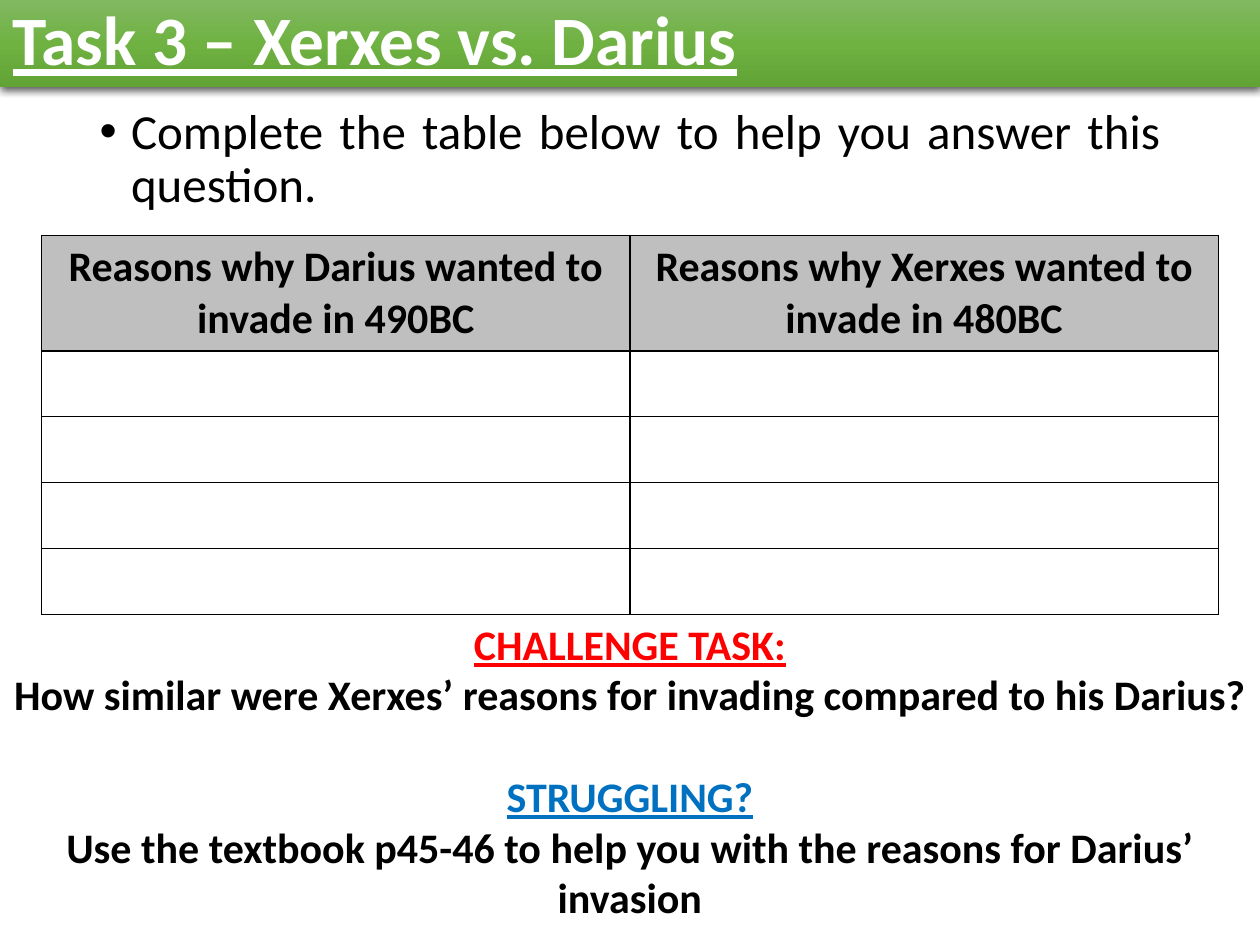
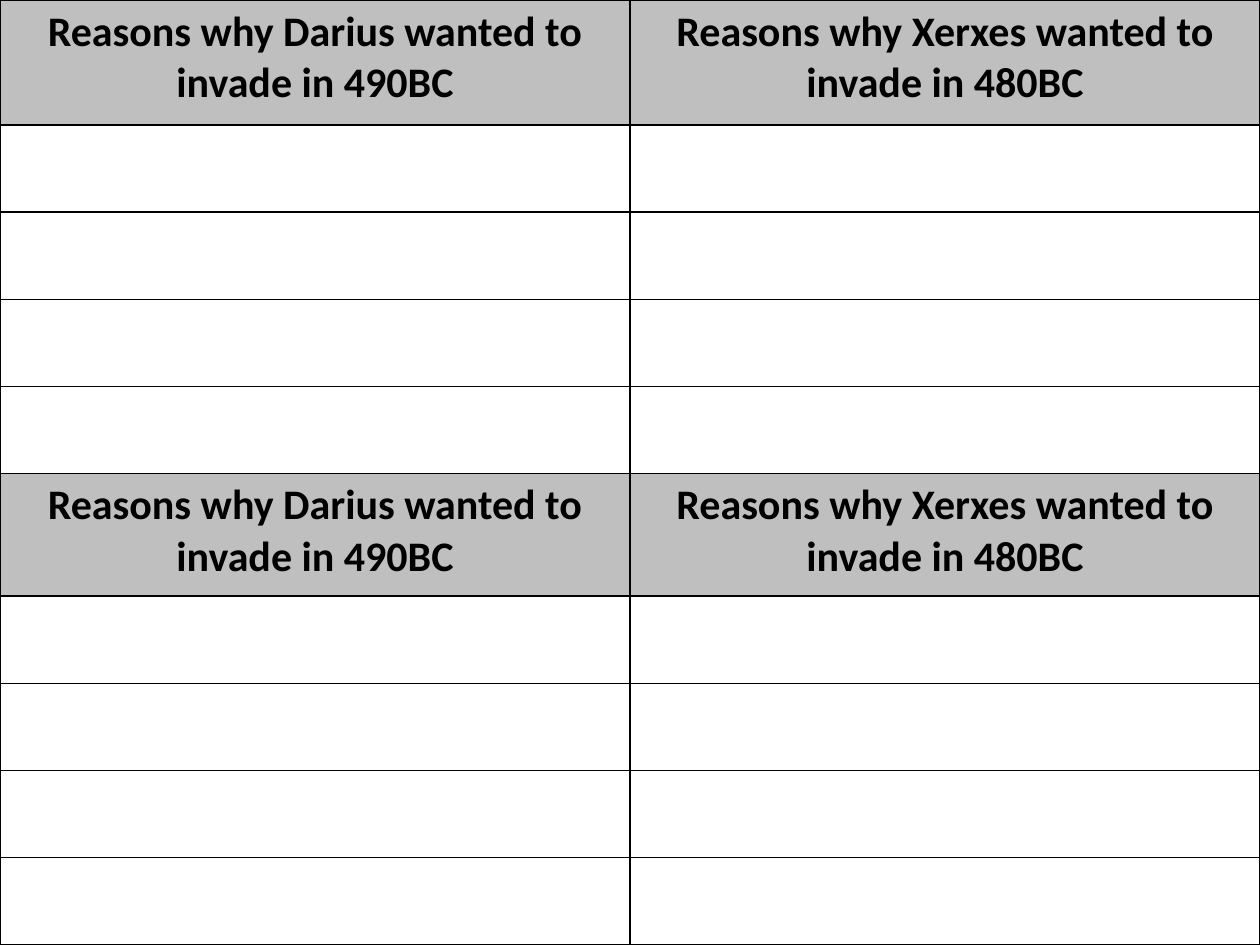
"""Build a worksheet slide and a printable sheet comparing Darius and Xerxes."""
from collections import namedtuple

from lxml import etree
from pptx import Presentation
from pptx import util as u
from pptx.dml.color import RGBColor
from pptx.enum import text
from pptx.oxml import ns, parse_xml

COLOURS = {
    "band_top": "81B861", "band_middle": "6FB242", "band_bottom": "62A336",
    "white": "FFFFFF", "black": "000000", "header": "BFBFBF",
    "challenge": "FF0000", "support": "0070C0",
}
FONT = "Calibri"
GRID_COLUMNS, GRID_ROWS = 100, 75
SLIDE_WIDTH, SLIDE_HEIGHT = u.Inches(10), u.Inches(7.5)
HEADINGS = (
    "Reasons why Darius wanted to invade in 490BC",
    "Reasons why Xerxes wanted to invade in 480BC",
)
ANSWER_ROWS = 4
Box = namedtuple("Box", "left top width height")


def across(columns):
    """Return the length of a number of grid columns."""
    return round(SLIDE_WIDTH * columns / GRID_COLUMNS)


def down(rows):
    """Return the length of a number of grid rows."""
    return round(SLIDE_HEIGHT * rows / GRID_ROWS)


def emu(box):
    """Return the four lengths of a grid box."""
    return across(box.left), down(box.top), across(box.width), down(box.height)


def place(shape, box):
    """Move and size a shape to fill a grid box."""
    shape.left, shape.top, shape.width, shape.height = emu(box)


def add_run(paragraph, words, size, colour="black", bold=False, underline=False):
    """Add one formatted run to a paragraph."""
    run = paragraph.add_run()
    run.text = words
    font = run.font
    font.name, font.size = FONT, u.Pt(size)
    font.bold, font.underline = bold, underline
    font.color.rgb = RGBColor.from_string(COLOURS[colour])


def style_band(shape):
    """Give a shape the green gradient and soft shadow of the title band."""
    stops = zip((0, 50, 100), ("band_top", "band_middle", "band_bottom"))
    stop_xml = "".join(
        f'<a:gs pos="{position * 1000}"><a:srgbClr val="{COLOURS[name]}"/></a:gs>'
        for position, name in stops
    )
    properties = shape.element.spPr
    properties.append(parse_xml(
        f'<a:gradFill {ns.nsdecls("a")} rotWithShape="1"><a:gsLst>{stop_xml}</a:gsLst>'
        '<a:lin ang="5400000" scaled="0"/></a:gradFill>'
    ))
    properties.append(parse_xml(
        f'<a:effectLst {ns.nsdecls("a")}><a:outerShdw blurRad="{u.Pt(4.5)}" '
        f'dist="{u.Pt(1.5)}" dir="5400000" algn="ctr" rotWithShape="0">'
        f'<a:srgbClr val="{COLOURS["black"]}"><a:alpha val="63000"/></a:srgbClr>'
        '</a:outerShdw></a:effectLst>'
    ))


def fill_title(slide, box, words):
    """Turn the title placeholder into the title band."""
    title = slide.shapes.title
    place(title, box)
    style_band(title)
    frame = title.text_frame
    frame.auto_size = text.MSO_AUTO_SIZE.NONE
    frame.vertical_anchor = text.MSO_ANCHOR.MIDDLE
    paragraph = frame.paragraphs[0]
    paragraph.alignment = text.PP_ALIGN.LEFT
    paragraph.line_spacing = 0.9
    add_run(paragraph, words, 39.6, "white", bold=True, underline=True)


def fill_instruction(slide, box, words):
    """Put one justified bullet in the body placeholder."""
    body = slide.placeholders[1]
    place(body, box)
    body.text_frame.auto_size = text.MSO_AUTO_SIZE.NONE
    paragraph = body.text_frame.paragraphs[0]
    paragraph.alignment = text.PP_ALIGN.JUSTIFY
    paragraph.line_spacing = 0.9
    paragraph.space_before = u.Pt(10)
    properties = paragraph._p.get_or_add_pPr()
    properties.set("marL", str(u.Inches(0.25)))
    properties.set("indent", str(-u.Inches(0.25)))
    etree.SubElement(properties, ns.qn("a:buFont")).set("typeface", "Arial")
    etree.SubElement(properties, ns.qn("a:buChar")).set("char", "•")
    add_run(paragraph, words, 28)


def outline_cell(cell):
    """Draw a thin black border on every side of a cell."""
    properties = cell._tc.get_or_add_tcPr()
    for index, side in enumerate(("lnL", "lnR", "lnT", "lnB")):
        properties.insert(index, parse_xml(
            f'<a:{side} {ns.nsdecls("a")} w="{u.Pt(1)}"><a:solidFill>'
            f'<a:srgbClr val="{COLOURS["black"]}"/></a:solidFill></a:{side}>'
        ))


def add_reasons_table(slide, box, answer_height):
    """Add the two-column table, its header taking the height left over."""
    table = slide.shapes.add_table(
        ANSWER_ROWS + 1, len(HEADINGS), *emu(box)).table
    table.horz_banding = False
    header_height = box.height - ANSWER_ROWS * answer_height
    for index, row in enumerate(table.rows):
        row.height = down(answer_height if index else header_height)
        for cell in row.cells:
            cell.fill.solid()
            cell.fill.fore_color.rgb = RGBColor.from_string(
                COLOURS["white" if index else "header"])
            outline_cell(cell)
    for cell, heading in zip(table.rows[0].cells, HEADINGS):
        paragraph = cell.text_frame.paragraphs[0]
        paragraph.alignment = text.PP_ALIGN.CENTER
        add_run(paragraph, heading, 24, bold=True)


def add_prompts(slide, box, prompts):
    """Add centred prompts, each an underlined label above its sentence."""
    frame = slide.shapes.add_textbox(*emu(box)).text_frame
    frame.word_wrap = True
    paragraph = frame.paragraphs[0]
    for index, (label, colour, sentence) in enumerate(prompts):
        if index:
            paragraph = frame.add_paragraph()
            paragraph.space_before = u.Pt(29.3)
        add_run(paragraph, label, 24, colour, bold=True, underline=True)
        add_run(frame.add_paragraph(), sentence, 24, bold=True)
    for paragraph in frame.paragraphs:
        paragraph.alignment = text.PP_ALIGN.CENTER


def build_task_slide(presentation):
    """Build the task slide with instruction, table and prompts."""
    slide = presentation.slides.add_slide(presentation.slide_layouts[1])
    fill_title(slide, Box(0, 0, GRID_COLUMNS, 6.9), "Task 3 – Xerxes vs. Darius")
    fill_instruction(slide, Box(6.9, 8, 86.2, 47.6),
                     "Complete the table below to help you answer this question.")
    add_reasons_table(slide, Box(3.3, 18.7, 93.4, 29.9), 5.23)
    add_prompts(slide, Box(0, 48.6, GRID_COLUMNS, 28.3), (
        ("CHALLENGE TASK:", "challenge",
         "How similar were Xerxes’ reasons for invading compared to his Darius?"),
        ("STRUGGLING?", "support",
         "Use the textbook p45-46 to help you with the reasons for Darius’ invasion"),
    ))


def build_print_slide(presentation):
    """Build the sheet with two blank tables, one above the other."""
    slide = presentation.slides.add_slide(presentation.slide_layouts[6])
    split = 37.6
    for top, bottom in ((0, split), (split, GRID_ROWS)):
        add_reasons_table(slide, Box(0, top, GRID_COLUMNS, bottom - top), 6.92)


def main():
    """Build and save the presentation."""
    presentation = Presentation()
    presentation.slide_width, presentation.slide_height = SLIDE_WIDTH, SLIDE_HEIGHT
    build_task_slide(presentation)
    build_print_slide(presentation)
    presentation.save("out.pptx")


if __name__ == "__main__":
    main()
